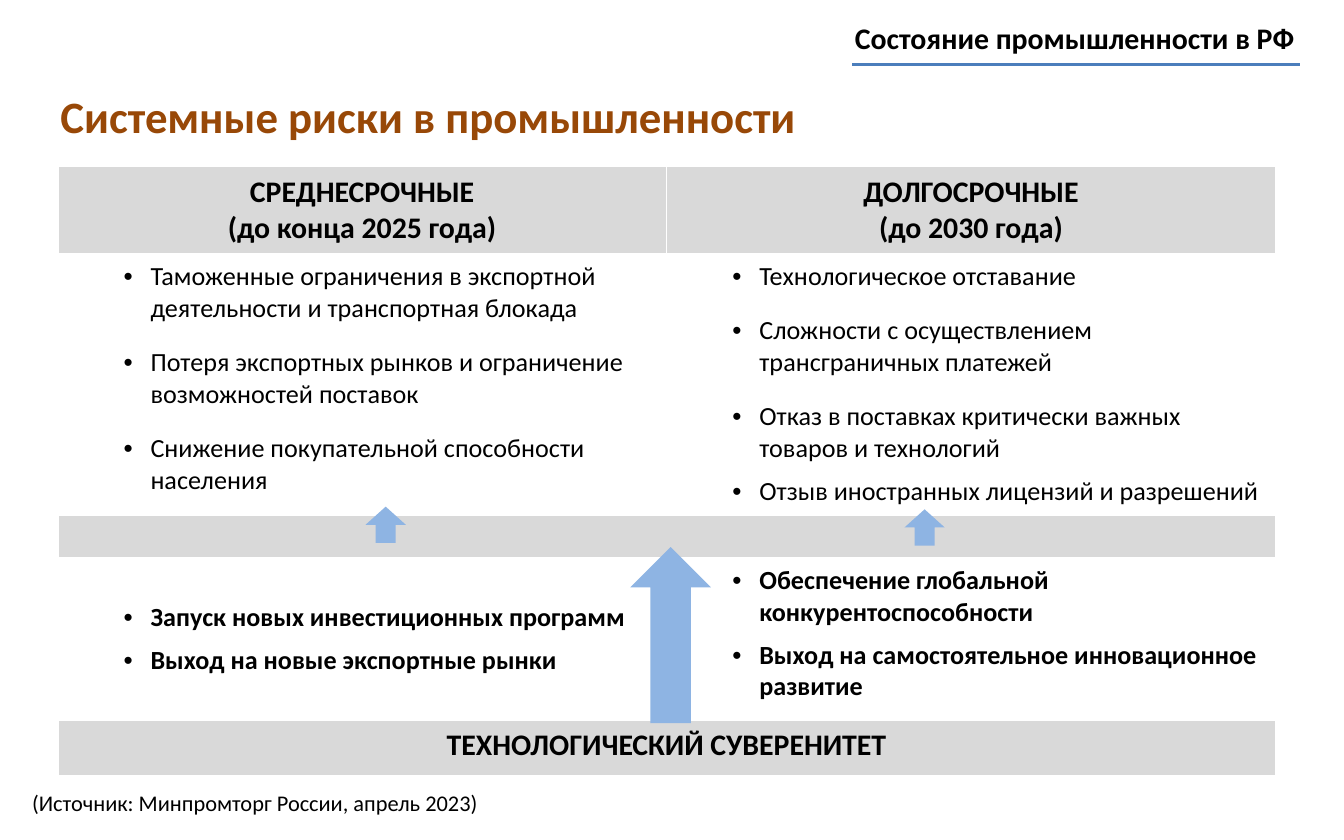
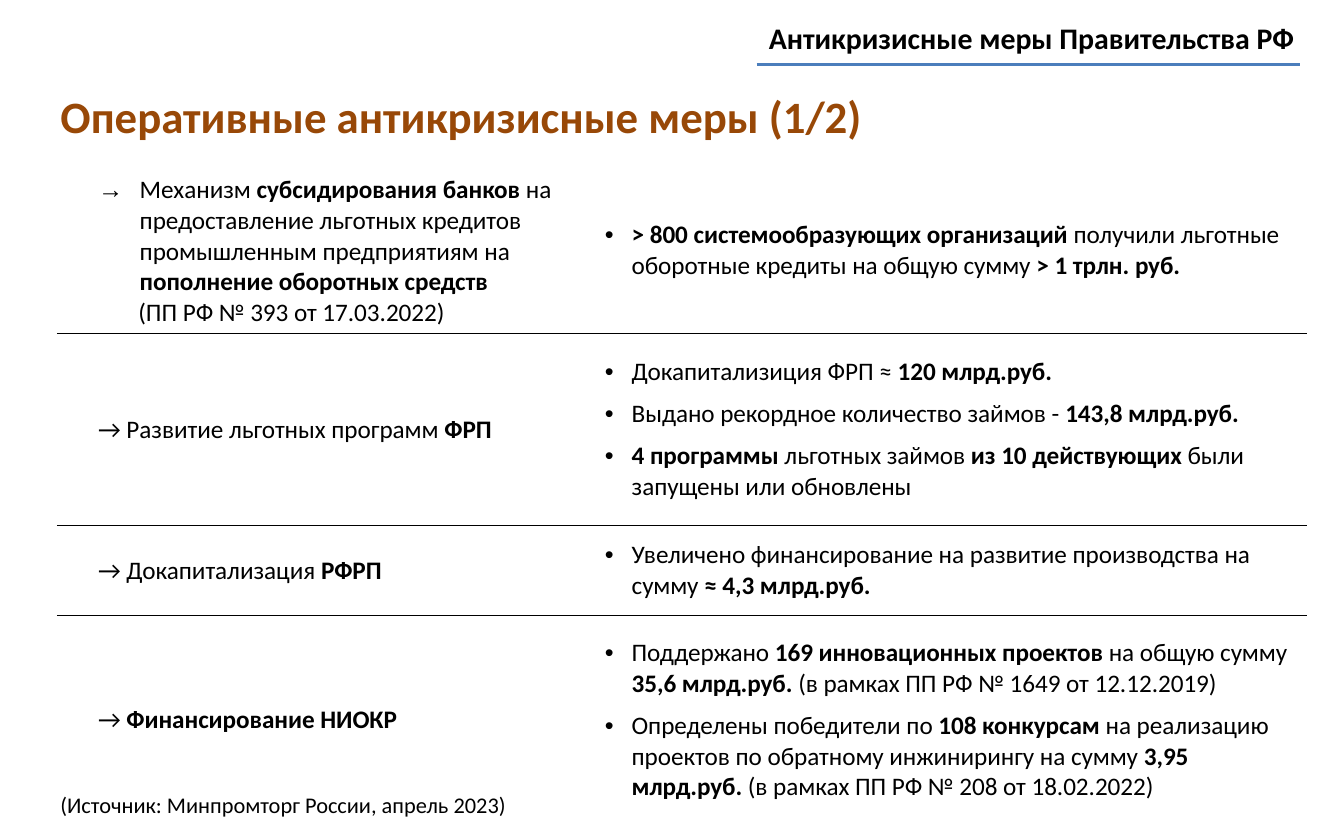
from lxml import etree
from pptx import Presentation
from pptx import util as u
from pptx.dml.color import RGBColor
from pptx.enum import shapes, text
from pptx.oxml.ns import qn

FONT = "Calibri"
BLACK, BROWN, GREY = "000000", "984807", "D9D9D9"
RULE_BLUE, ARROW_BLUE = "4B7EBC", "8EB4E3"
SOURCE = "(Источник: Минпромторг России, апрель 2023)"
MIDDLE, TOP = text.MSO_ANCHOR.MIDDLE, text.MSO_ANCHOR.TOP
CENTER, LEFT, RIGHT = text.PP_ALIGN.CENTER, text.PP_ALIGN.LEFT, text.PP_ALIGN.RIGHT


def rgb(value):
    """Turn a hex string into a colour."""
    return RGBColor.from_string(value)


def write(p, content, size, bold=False, color=BLACK, align=LEFT, before=0, after=0):
    """Fill a paragraph; parts between asterisks switch the weight."""
    p.alignment = align
    p.space_before, p.space_after = u.Pt(before), u.Pt(after)
    for i, part in enumerate(content.split("*")):
        if part:
            r = p.add_run()
            r.text = part
            r.font.name, r.font.size = FONT, u.Pt(size)
            r.font.bold = bold != (i % 2 == 1)
            r.font.color.rgb = rgb(color)


def indent(p, margin, hanging=0, bullet=None):
    """Indent a paragraph in inches and give it an optional bullet."""
    pPr = p._p.get_or_add_pPr()
    pPr.set("marL", str(u.Inches(margin)))
    pPr.set("indent", str(-u.Inches(hanging)))
    if bullet:
        etree.SubElement(pPr, qn("a:buFont")).set("typeface", "Arial")
        etree.SubElement(pPr, qn("a:buChar")).set("char", bullet)


def paragraphs(tf, count):
    """Return the first paragraph and as many added ones as needed."""
    return [tf.paragraphs[0]] + [tf.add_paragraph() for _ in range(count - 1)]


def bullets(cell, items, margin, size, bold=False, anchor=TOP):
    """Write (text, space after) pairs as a bulleted list."""
    cell.vertical_anchor = anchor
    for p, (content, after) in zip(paragraphs(cell.text_frame, len(items)), items):
        write(p, content, size, bold, after=after)
        indent(p, margin, 0.2, "•")


def caption(s, box, content, size, bold=False, align=LEFT):
    """Add a one-line text box."""
    tf = s.shapes.add_textbox(*map(u.Inches, box)).text_frame
    tf.word_wrap = True
    write(tf.paragraphs[0], content, size, bold, align=align)


def add_slide(prs, title, section, rule_left, source_box):
    """Add a slide with its title, ruled section name and source note."""
    s = prs.slides.add_slide(prs.slide_layouts[5])
    sp = s.shapes.title
    sp.left, sp.top, sp.width, sp.height = map(u.Inches, (0.35, 0.61, 9.31, 0.55))
    tf = sp.text_frame
    tf.auto_size, tf.vertical_anchor = text.MSO_AUTO_SIZE.NONE, TOP
    write(tf.paragraphs[0], title, 24, True, BROWN)
    caption(s, (2.09, 0.1, 7.64, 0.37), section, 16, True, RIGHT)
    ends = map(u.Inches, (rule_left, 0.48, 9.67, 0.48))
    line = s.shapes.add_connector(shapes.MSO_CONNECTOR.STRAIGHT, *ends)
    line.line.color.rgb, line.line.width = rgb(RULE_BLUE), u.Pt(1.25)
    etree.SubElement(line._element.spPr, qn("a:effectLst"))
    caption(s, source_box, SOURCE, 12)
    return s


def add_grid(s, left, top, widths, heights):
    """Add a table without fills or banding."""
    box = map(u.Inches, (left, top, sum(widths), sum(heights)))
    table = s.shapes.add_table(len(heights), len(widths), *box).table
    table.first_row = table.horz_banding = False
    for col, width in zip(table.columns, widths):
        col.width = u.Inches(width)
    for row, height in zip(table.rows, heights):
        row.height = u.Inches(height)
        for cell in row.cells:
            cell.fill.background()
    return table


def add_border(cell, side, width):
    """Draw a black border on one side of a cell."""
    ln = etree.Element(qn("a:" + side), w=str(u.Pt(width)))
    fill = etree.SubElement(ln, qn("a:solidFill"))
    etree.SubElement(fill, qn("a:srgbClr")).set("val", BLACK)
    cell._tc.get_or_add_tcPr().insert(0, ln)


def risks_table(s, left, top):
    """Build the table of medium-term and long-term risks."""
    table = add_grid(s, left, top, [4.53] * 2, [0.65, 1.94, 0.32, 1.21, 0.41])
    for row in (0, 2, 4):
        for cell in table.rows[row].cells:
            cell.fill.solid()
            cell.fill.fore_color.rgb = rgb(GREY)
    heads = [("СРЕДНЕСРОЧНЫЕ", "(до конца 2025 года)"),
             ("ДОЛГОСРОЧНЫЕ", "(до 2030 года)")]
    risks = [
        [("Таможенные ограничения в экспортной деятельности и транспортная блокада", 12),
         ("Потеря экспортных рынков и ограничение возможностей поставок", 12),
         ("Снижение покупательной способности населения", 0)],
        [("Технологическое отставание", 12),
         ("Сложности с осуществлением трансграничных платежей", 12),
         ("Отказ в поставках критически важных товаров и технологий", 6),
         ("Отзыв иностранных лицензий и разрешений", 0)]]
    answers = [
        [("Запуск новых инвестиционных программ", 6),
         ("Выход на новые экспортные рынки", 0)],
        [("Обеспечение глобальной конкурентоспособности", 6),
         ("Выход на самостоятельное инновационное развитие", 0)]]
    for col, anchor in enumerate((MIDDLE, TOP)):
        head = table.cell(0, col)
        head.vertical_anchor = MIDDLE
        for p, content in zip(paragraphs(head.text_frame, 2), heads[col]):
            write(p, content, 16, True, align=CENTER)
        bullets(table.cell(1, col), risks[col], 0.59, 14)
        bullets(table.cell(3, col), answers[col], 0.59, 14, True, anchor)
    for row in (2, 4):
        table.cell(row, 0).merge(table.cell(row, 1))
    for cell in table.rows[2].cells:
        cell.margin_top = cell.margin_bottom = 0
    p = table.cell(4, 0).text_frame.paragraphs[0]
    write(p, "ТЕХНОЛОГИЧЕСКИЙ СУВЕРЕНИТЕТ", 16, True, align=CENTER, before=12)


def up_arrow(s, *box):
    """Add a plain arrow pointing up."""
    sp = s.shapes.add_shape(shapes.MSO_SHAPE.UP_ARROW, *map(u.Inches, box))
    sp.shadow.inherit = False
    sp.fill.solid()
    sp.fill.fore_color.rgb = rgb(ARROW_BLUE)
    sp.line.fill.background()


def measures_table(s, left, top):
    """Build the ruled table of measures and their results."""
    table = add_grid(s, left, top, [3.78, 5.51], [1.23, 1.43, 0.67, 1.56])
    measures = ["→ Развитие льготных программ *ФРП*", "→ Докапитализация *РФРП*",
                "→ *Финансирование НИОКР*"]
    results = [
        [("*> 800 системообразующих организаций* получили льготные оборотные кредиты "
          "на общую сумму *> 1 трлн. руб.*", 12)],
        [("Докапитализиция ФРП ≈* 120 млрд.руб.*", 6),
         ("Выдано рекордное количество займов - *143,8 млрд.руб.*", 6),
         ("*4 программы* льготных займов *из 10 действующих* были запущены "
          "или обновлены", 6)],
        [("Увеличено финансирование на развитие производства на сумму "
          "*≈ 4,3 млрд.руб.*", 12)],
        [("Поддержано *169 инновационных проектов* на общую сумму *35,6 млрд.руб. *"
          "(в рамках ПП РФ № 1649 от 12.12.2019)", 6),
         ("Определены победители по *108 конкурсам* на реализацию проектов по обратному "
          "инжинирингу на сумму *3,95 млрд.руб.* (в рамках ПП РФ № 208 от 18.02.2022)", 6)]]
    first, second = paragraphs(table.cell(0, 0).text_frame, 2)
    write(first, "Механизм *субсидирования банков* на предоставление льготных кредитов "
          "промышленным предприятиям на *пополнение оборотных средств*", 13.5, before=12)
    indent(first, 0.51, 0.31, "→")
    write(second, "(ПП РФ № 393 от 17.03.2022)", 13.5)
    indent(second, 0.5)
    for row, content in enumerate(measures, 1):
        cell = table.cell(row, 0)
        cell.vertical_anchor = MIDDLE
        p = cell.text_frame.paragraphs[0]
        write(p, content, 13.5, after=6 if row == 3 else 0)
        indent(p, 0.2)
    for row, items in enumerate(results):
        bullets(table.cell(row, 1), items, 0.39, 13.5, anchor=MIDDLE)
    for row, width in enumerate((1, 0.5, 1)):
        for col in range(2):
            add_border(table.cell(row, col), "lnB", width)
    for row, width in enumerate((1, 0.5, 1), 1):
        for col in range(2):
            add_border(table.cell(row, col), "lnT", width)


def main():
    """Build both slides and save the presentation."""
    prs = Presentation()
    prs.slide_width, prs.slide_height = u.Inches(10), u.Inches(6.25)
    s = add_slide(prs, "Системные риски в промышленности",
                  "Состояние промышленности в РФ", 6.34, (0.14, 5.82, 3.6, 0.3))
    risks_table(s, 0.43, 1.24)
    up_arrow(s, 4.69, 4.07, 0.6, 1.31)
    up_arrow(s, 6.73, 3.79, 0.3, 0.27)
    up_arrow(s, 2.72, 3.77, 0.3, 0.27)
    s = add_slide(prs, "Оперативные антикризисные меры (1/2)",
                  "Антикризисные меры Правительства РФ", 5.63, (0.35, 5.84, 3.65, 0.3))
    measures_table(s, 0.43, 1.25)
    prs.save("out.pptx")


if __name__ == "__main__":
    main()
